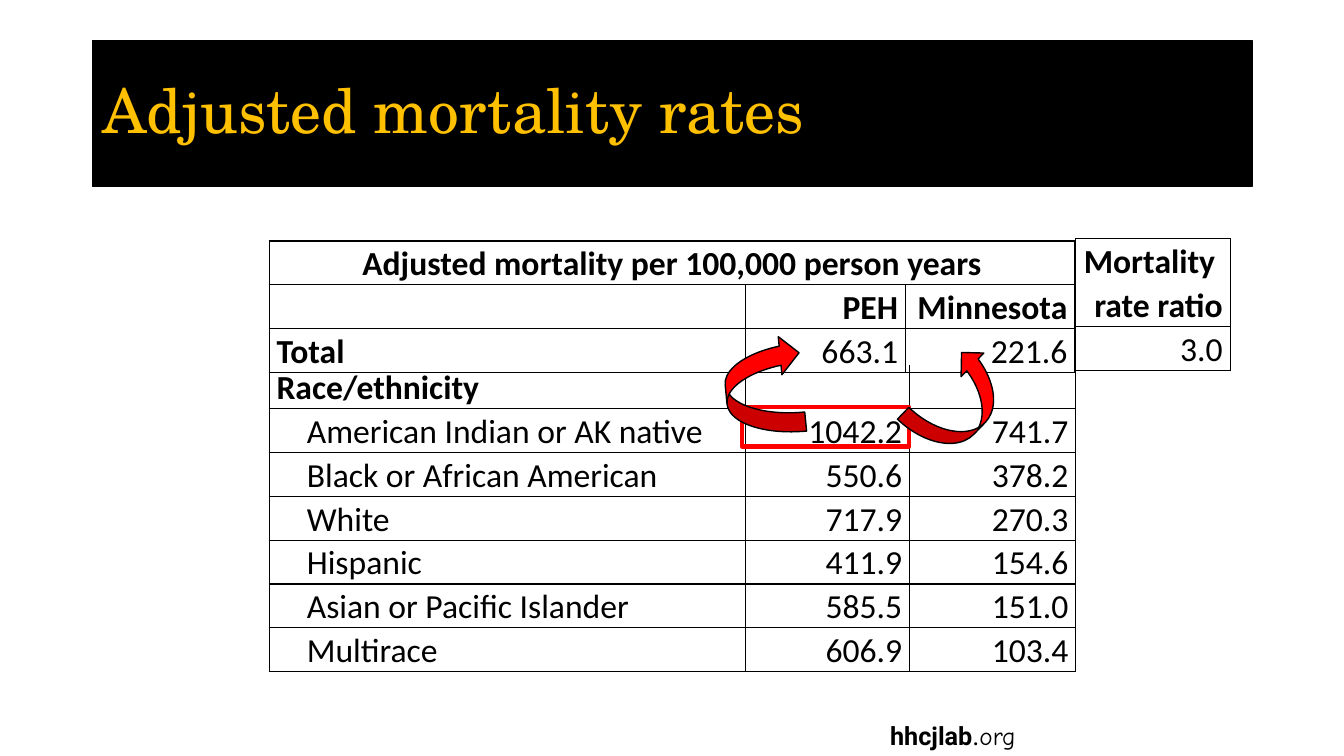
from dataclasses import dataclass

from lxml.etree import SubElement
from pptx import Presentation
from pptx.dml.color import RGBColor
from pptx.enum.shapes import MSO_SHAPE
from pptx.enum.text import MSO_ANCHOR, MSO_AUTO_SIZE, PP_ALIGN
from pptx.oxml.ns import qn
from pptx.util import Inches, Pt

BLACK = RGBColor(0x00, 0x00, 0x00)
GOLD = RGBColor(0xFF, 0xC0, 0x00)
RED = RGBColor(0xFF, 0x00, 0x00)

WIDTH, HEIGHT = Inches(13.33), Inches(7.5)
ROW = 5.8
LABEL_COL = 35.41
TABLE_LEFT = 20.03
CELL_PAD = 0.55
INDENT = 2.8


@dataclass(frozen=True)
class Cell:
    text: str = ""
    bold: bool = False
    align: PP_ALIGN = PP_ALIGN.RIGHT
    indent: bool = False


@dataclass(frozen=True)
class Grid:
    left: float
    top: float
    cols: list[float]
    rows: list[float]
    cells: list[list[Cell]]
    open_top: bool = False
    merged_header: bool = False


@dataclass(frozen=True)
class Mark:
    kind: MSO_SHAPE
    box: tuple[float, float, float, float]
    rotation: float = 0
    fill: RGBColor | None = RED
    line: RGBColor = BLACK
    weight: float = 1


def x(share: float) -> int:
    return round(WIDTH * share / 100)


def y(share: float) -> int:
    return round(HEIGHT * share / 100)


def place(left: float, top: float, width: float, height: float) -> tuple[int, int, int, int]:
    return x(left), y(top), x(width), y(height)


def add_text(p, text: str, *, size: float = 24, font: str = "Calibri", color: RGBColor = BLACK,
             bold: bool = False, align: PP_ALIGN = PP_ALIGN.LEFT, spacing: float = 1.0) -> None:
    p.alignment = align
    p.line_spacing = spacing
    r = p.add_run()
    r.text = text
    r.font.size = Pt(size)
    r.font.name = font
    r.font.bold = bold
    r.font.color.rgb = color


def set_borders(cell, open_top: bool) -> None:
    tc_pr = cell._tc.get_or_add_tcPr()
    for side in ("lnL", "lnR", "lnT", "lnB"):
        ln = SubElement(tc_pr, qn(f"a:{side}"), w=str(Pt(1)))
        if side == "lnT" and open_top:
            SubElement(ln, qn("a:noFill"))
        else:
            fill = SubElement(ln, qn("a:solidFill"))
            SubElement(fill, qn("a:srgbClr"), val=str(BLACK))


def add_grid(s, grid: Grid) -> None:
    box = place(grid.left, grid.top, sum(grid.cols), sum(grid.rows))
    table = s.shapes.add_table(len(grid.rows), len(grid.cols), *box).table
    table.first_row = table.horz_banding = False
    for column, share in zip(table.columns, grid.cols):
        column.width = x(share)
    for row, share in zip(table.rows, grid.rows):
        row.height = y(share)
    for i, row in enumerate(grid.cells):
        for j, item in enumerate(row):
            cell = table.cell(i, j)
            set_borders(cell, grid.open_top and i == 0)
            cell.fill.background()
            cell.vertical_anchor = MSO_ANCHOR.BOTTOM
            cell.margin_left = x(INDENT if item.indent else CELL_PAD)
            cell.margin_right = x(CELL_PAD)
            cell.margin_top = cell.margin_bottom = 0
            tf = cell.text_frame
            for n, line in enumerate(item.text.split("\n") if item.text else []):
                p = tf.add_paragraph() if n else tf.paragraphs[0]
                add_text(p, line, bold=item.bold, align=item.align, spacing=1.07)
    if grid.merged_header:
        table.cell(0, 0).merge(table.cell(0, len(grid.cols) - 1))


def add_mark(s, mark: Mark) -> None:
    sp = s.shapes.add_shape(mark.kind, *place(*mark.box))
    sp.shadow.inherit = False
    sp.rotation = mark.rotation
    if mark.fill is None:
        sp.fill.background()
    else:
        sp.fill.solid()
        sp.fill.fore_color.rgb = mark.fill
    sp.line.color.rgb = mark.line
    sp.line.width = Pt(mark.weight)


def add_title(s) -> None:
    sp = s.shapes.title
    sp.left, sp.top, sp.width, sp.height = place(6.9, 5.33, 86.27, 19.33)
    sp.fill.solid()
    sp.fill.fore_color.rgb = BLACK
    sp.line.color.rgb = BLACK
    sp.line.width = Pt(1)
    tf = sp.text_frame
    tf.auto_size = MSO_AUTO_SIZE.NONE
    tf.vertical_anchor = MSO_ANCHOR.MIDDLE
    add_text(tf.paragraphs[0], "Adjusted mortality rates", size=44,
             font="TeX Gyre Schola", color=GOLD, spacing=0.9)


def add_footer(s) -> None:
    tf = s.shapes.add_textbox(*place(65.49, 94.67, 12.68, 5.33)).text_frame
    tf.word_wrap = False
    p = tf.paragraphs[0]
    add_text(p, "hhcjlab", size=18, font="Roboto", bold=True)
    add_text(p, ".", size=18, font="TeX Gyre Schola")
    add_text(p, "org", size=18, font="Comic Neue")


RATES = [
    ("American Indian or AK native", "1042.2", "741.7"),
    ("Black or African American", "550.6", "378.2"),
    ("White", "717.9", "270.3"),
    ("Hispanic", "411.9", "154.6"),
    ("Asian or Pacific Islander", "585.5", "151.0"),
    ("Multirace", "606.9", "103.4"),
]

BY_RACE = Grid(
    TABLE_LEFT, 48.27, [LABEL_COL, 12.23, 12.38], [ROW] * (len(RATES) + 1),
    [[Cell("Race/ethnicity", True, PP_ALIGN.LEFT), Cell(), Cell()]]
    + [[Cell(group, align=PP_ALIGN.LEFT, indent=True), Cell(peh), Cell(state)]
       for group, peh, state in RATES],
    open_top=True)

OVERALL = Grid(
    TABLE_LEFT, 31.87, [LABEL_COL, 11.93, 12.6], [ROW] * 3,
    [[Cell("Adjusted mortality per 100,000 person years", True, PP_ALIGN.CENTER), Cell(), Cell()],
     [Cell(), Cell("PEH", True), Cell("Minnesota", True)],
     [Cell("Total", True, PP_ALIGN.LEFT), Cell("663.1"), Cell("221.6")]],
    merged_header=True)

RATIO = Grid(80.05, 31.6, [11.48], [2 * ROW, ROW],
             [[Cell("Mortality \nrate ratio", True)], [Cell("3.0")]])

HIGHLIGHT = Mark(MSO_SHAPE.RECTANGLE, (55.21, 53.87, 12.45, 5.2), fill=None, line=RED, weight=3)
ARROWS = [
    Mark(MSO_SHAPE.CURVED_DOWN_ARROW, (53.19, 46, 7.28, 10.13), 264.5),
    Mark(MSO_SHAPE.CURVED_UP_ARROW, (67.29, 48.93, 8.1, 8.67), 313.9),
]


def main() -> None:
    prs = Presentation()
    prs.slide_width, prs.slide_height = WIDTH, HEIGHT
    s = prs.slides.add_slide(prs.slide_layouts[5])
    add_title(s)
    add_footer(s)
    add_grid(s, BY_RACE)
    add_grid(s, OVERALL)
    add_mark(s, HIGHLIGHT)
    add_grid(s, RATIO)
    for arrow in ARROWS:
        add_mark(s, arrow)
    prs.save("out.pptx")


if __name__ == "__main__":
    main()
